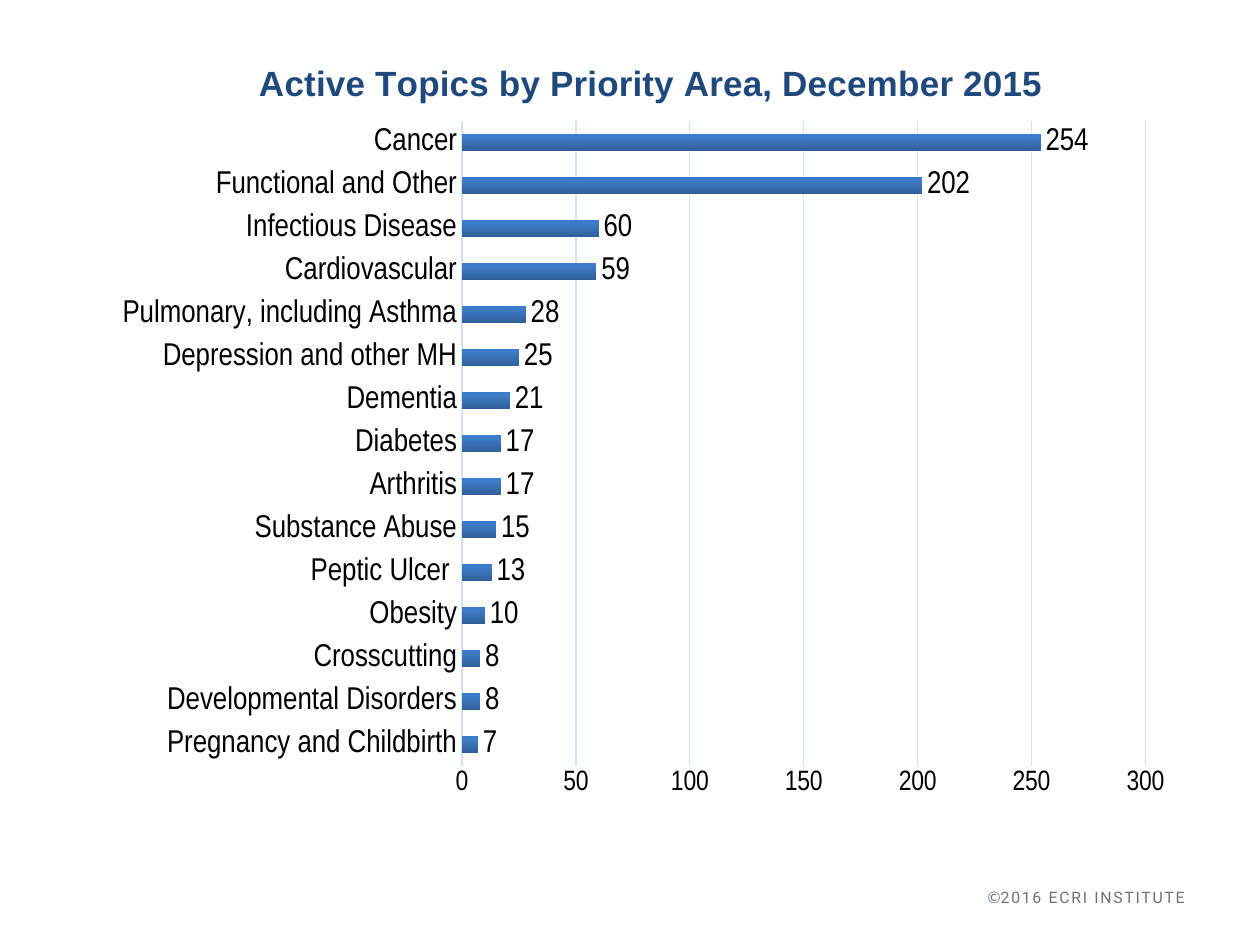
"""Build a slide with a bar chart of active topics by priority area."""
import copy
from typing import NamedTuple

import pptx
import pptx.chart.data
import pptx.dml.color
import pptx.enum.chart
import pptx.enum.text
import pptx.oxml
import pptx.oxml.ns
import pptx.util
from pptx.util import Inches

COLORS = {
    "title": "1F497D",
    "text": "000000",
    "grid": "D4E3F4",
    "footer": "6A737B",
    "bar_dark": "2F5F99",
    "bar_mid": "3D7CC7",
    "bar_light": "3A7CCB",
}
BAR_STOPS = [(0, "bar_dark"), (0.8, "bar_mid"), (1, "bar_light")]


class Topic(NamedTuple):
    area: str
    count: int


class Run(NamedTuple):
    text: str
    font: str
    spacing: int


TOPICS = [
    Topic("Pregnancy and Childbirth", 7),
    Topic("Developmental Disorders", 8),
    Topic("Crosscutting", 8),
    Topic("Obesity", 10),
    Topic("Peptic Ulcer ", 13),
    Topic("Substance Abuse", 15),
    Topic("Arthritis", 17),
    Topic("Diabetes", 17),
    Topic("Dementia", 21),
    Topic("Depression and other MH", 25),
    Topic("Pulmonary, including Asthma", 28),
    Topic("Cardiovascular", 59),
    Topic("Infectious Disease", 60),
    Topic("Functional and Other", 202),
    Topic("Cancer", 254),
]
FOOTER = [Run("©", "Lato", 0), Run("2016 ECRI INSTITUTE", "Roboto", 100)]


def rgb(name: str) -> pptx.dml.color.RGBColor:
    """Return a palette colour."""
    return pptx.dml.color.RGBColor.from_string(COLORS[name])


def set_font(font, name: str, size: float, color: str, bold: bool = False) -> None:
    """Format a font."""
    font.name = name
    font.size = pptx.util.Pt(size)
    font.bold = bold
    font.color.rgb = rgb(color)


def set_line(line) -> None:
    """Give a line the thin grid style."""
    line.color.rgb = rgb("grid")
    line.width = pptx.util.Pt(0.75)


def place(parent, **values) -> None:
    """Set a manual layout on a chart title or plot area."""
    for old in parent.findall(pptx.oxml.ns.qn("c:layout")):
        parent.remove(old)
    items = "".join(f'<c:{k} val="{v}"/>' for k, v in values.items())
    layout = pptx.oxml.parse_xml(
        f'<c:layout {pptx.oxml.ns.nsdecls("c")}><c:manualLayout>{items}'
        "</c:manualLayout></c:layout>"
    )
    tx = parent.find(pptx.oxml.ns.qn("c:tx"))
    parent.insert(0 if tx is None else 1, layout)


def fill_bars(series) -> None:
    """Fill the bars with a three-stop vertical gradient."""
    fill = series.format.fill
    fill.gradient()
    fill.gradient_angle = 90
    stops = series._element.spPr.find(".//" + pptx.oxml.ns.qn("a:gsLst"))
    stops.append(copy.deepcopy(stops[-1]))
    for stop, (position, color) in zip(fill.gradient_stops, BAR_STOPS):
        stop.position = position
        stop.color.rgb = rgb(color)


def add_topic_chart(s) -> None:
    """Add the bar chart with its title, axes and labels."""
    data = pptx.chart.data.CategoryChartData()
    data.categories = [t.area for t in TOPICS]
    data.add_series("Series 1", [t.count for t in TOPICS])
    chart = s.shapes.add_chart(
        pptx.enum.chart.XL_CHART_TYPE.BAR_CLUSTERED,
        Inches(0.8), Inches(0.25), Inches(8.61), Inches(6.19), data,
    ).chart
    set_font(chart.font, "Calibri", 10, "text")
    chart.has_legend = False

    chart.has_title = True
    p = chart.chart_title.text_frame.paragraphs[0]
    p.text = "Active Topics by Priority Area, December 2015"
    set_font(p.runs[0].font, "Arial", 20, "title", bold=True)
    place(chart.chart_title._element, xMode="edge", yMode="edge", x=0.14, y=0.03)
    place(
        chart._chartSpace.chart.plotArea,
        layoutTarget="inner", xMode="edge", yMode="edge",
        x=0.333, y=0.115, w=0.63, h=0.827,
    )

    for axis, size in ((chart.category_axis, 18), (chart.value_axis, 16)):
        axis.major_tick_mark = pptx.enum.chart.XL_TICK_MARK.NONE
        axis.minor_tick_mark = pptx.enum.chart.XL_TICK_MARK.NONE
        set_font(axis.tick_labels.font, "Arial Narrow", size, "text")
    set_line(chart.category_axis.format.line)
    value_axis = chart.value_axis
    value_axis.minimum_scale, value_axis.maximum_scale = 0, 300
    value_axis.major_unit = 50
    value_axis.format.line.fill.background()
    set_line(value_axis.major_gridlines.format.line)

    plot = chart.plots[0]
    plot.gap_width = 150
    plot.vary_by_categories = False
    fill_bars(plot.series[0])
    labels = plot.series[0].data_labels
    labels.show_value = True
    labels.position = pptx.enum.chart.XL_LABEL_POSITION.OUTSIDE_END
    set_font(labels.font, "Arial Narrow", 18, "text")


def add_footer(s) -> None:
    """Add the right-aligned copyright line."""
    tf = s.shapes.add_textbox(
        Inches(7.08), Inches(7), Inches(2.42), Inches(0.25)
    ).text_frame
    tf.word_wrap = True
    p = tf.paragraphs[0]
    p.alignment = pptx.enum.text.PP_ALIGN.RIGHT
    for item in FOOTER:
        r = p.add_run()
        r.text = item.text
        set_font(r.font, item.font, 9, "footer")
        r.font._element.set("spc", str(item.spacing))


def main() -> None:
    """Build and save the slide."""
    prs = pptx.Presentation()
    prs.slide_width, prs.slide_height = Inches(10), Inches(7.5)
    s = prs.slides.add_slide(prs.slide_layouts[6])
    add_footer(s)
    add_topic_chart(s)
    prs.save("out.pptx")


if __name__ == "__main__":
    main()
